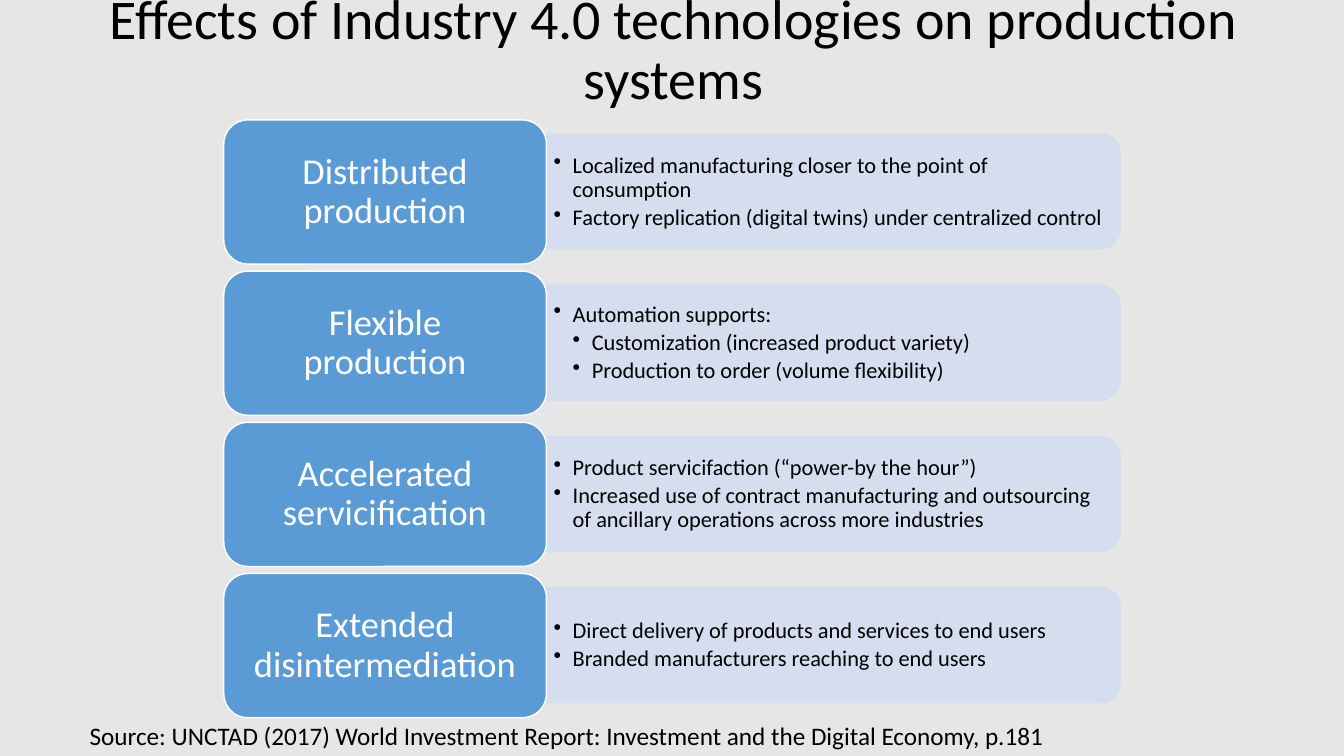
from lxml import etree
from pptx import Presentation
from pptx import util as u
from pptx.dml.color import RGBColor
from pptx.enum import shapes, text
from pptx.oxml import ns

ROWS = [
    ("Distributed production", [
        (1, "Localized manufacturing closer to the point of consumption"),
        (1, "Factory replication (digital twins) under centralized control"),
    ]),
    ("Flexible production", [
        (1, "Automation supports:"),
        (2, "Customization (increased product variety)"),
        (2, "Production to order (volume flexibility)"),
    ]),
    ("Accelerated servicification", [
        (1, "Product servicifaction (“power-by the hour”)"),
        (1, "Increased use of contract manufacturing and outsourcing of ancillary operations across more industries"),
    ]),
    ("Extended disintermediation", [
        (1, "Direct delivery of products and services to end users"),
        (1, "Branded manufacturers reaching to end users"),
    ]),
]


def colour(hex_string):
    return RGBColor.from_string(hex_string)


class EffectsSlide:
    FONT = "Calibri"
    BACKGROUND = "E7E6E6"
    BLUE = "5B9BD5"
    PALE = "D2DEEF"
    BLACK = "000000"
    WHITE = "FFFFFF"
    INDENT = u.Inches(0.19)

    def __init__(self, presentation):
        self.slide = presentation.slides.add_slide(presentation.slide_layouts[5])
        fill = self.slide.background.fill
        fill.solid()
        fill.fore_color.rgb = colour(self.BACKGROUND)

    def style(self, paragraph, size, hex_string, align=text.PP_ALIGN.LEFT, spacing=0.9):
        paragraph.alignment = align
        paragraph.line_spacing = spacing
        paragraph.font.name = self.FONT
        paragraph.font.size = u.Pt(size)
        paragraph.font.color.rgb = colour(hex_string)

    def frame(self, shape, side=0.1, edge=0.05, anchor=text.MSO_ANCHOR.MIDDLE, wrap=True):
        frame = shape.text_frame
        frame.word_wrap = wrap
        frame.vertical_anchor = anchor
        frame.margin_left = frame.margin_right = u.Inches(side)
        frame.margin_top = frame.margin_bottom = u.Inches(edge)
        return frame

    def box(self, kind, left, top, width, height, fill, line):
        shape = self.slide.shapes.add_shape(kind, *map(u.Inches, (left, top, width, height)))
        shape.shadow.inherit = False
        shape.fill.solid()
        shape.fill.fore_color.rgb = colour(fill)
        shape.line.color.rgb = colour(line)
        shape.line.width = u.Pt(1)
        return shape

    def textbox(self, left, top, width, height):
        return self.slide.shapes.add_textbox(*map(u.Inches, (left, top, width, height)))

    def title(self, words):
        shape = self.slide.shapes.title
        shape.left, shape.top, shape.width, shape.height = map(u.Inches, (0.05, 0.19, 13.26, 0.64))
        frame = self.frame(shape)
        frame.auto_size = text.MSO_AUTO_SIZE.NONE
        frame.text = words
        self.style(frame.paragraphs[0], 40, self.BLACK, text.PP_ALIGN.CENTER)

    def bar(self, left, top, width, height):
        turned_left = left + (width - height) / 2
        turned_top = top + (height - width) / 2
        shape = self.box(shapes.MSO_SHAPE.ROUND_2_SAME_RECTANGLE, turned_left, turned_top,
                         height, width, self.PALE, self.PALE)
        shape.rotation = 90
        for tint in list(shape._element.spPr.iter(ns.qn("a:srgbClr"))):
            etree.SubElement(tint, ns.qn("a:alpha"), val="90000")

    def bullets(self, left, top, width, height, items):
        frame = self.frame(self.textbox(left, top, width, height), 0.07, 0.03)
        for index, (level, words) in enumerate(items):
            paragraph = frame.add_paragraph() if index else frame.paragraphs[0]
            paragraph.text = words
            paragraph.level = level
            properties = paragraph._p.get_or_add_pPr()
            properties.set("marL", str(self.INDENT * level))
            properties.set("indent", str(-self.INDENT))
            etree.SubElement(properties, ns.qn("a:buChar"), char="•")
            paragraph.space_after = u.Pt(2.9)
            self.style(paragraph, 16, self.BLACK)

    def label(self, left, top, width, height, words):
        shape = self.box(shapes.MSO_SHAPE.ROUNDED_RECTANGLE, left, top, width, height,
                         self.BLUE, self.WHITE)
        frame = self.frame(shape, 0.18, 0.12)
        frame.text = words
        self.style(frame.paragraphs[0], 26, self.WHITE, text.PP_ALIGN.CENTER)

    def row(self, top, heading, items):
        self.bar(5.42, top + 0.14, 5.69, 1.14)
        self.bullets(5.42, top + 0.2, 5.63, 1.03, items)
        self.label(2.22, top, 3.2, 1.43, heading)

    def source(self, words):
        frame = self.frame(self.textbox(0.79, 7.1, 9.78, 0.4),
                           anchor=text.MSO_ANCHOR.TOP, wrap=False)
        frame.auto_size = text.MSO_AUTO_SIZE.SHAPE_TO_FIT_TEXT
        frame.text = words
        self.style(frame.paragraphs[0], 18, self.BLACK, spacing=1.0)


def main():
    presentation = Presentation()
    presentation.slide_width = u.Inches(13.33)
    presentation.slide_height = u.Inches(7.5)
    slide = EffectsSlide(presentation)
    slide.title("Effects of Industry 4.0 technologies on production systems")
    for index, (heading, items) in enumerate(ROWS):
        slide.row(1.19 + 1.5 * index, heading, items)
    slide.source("Source: UNCTAD (2017) World Investment Report: "
                 "Investment and the Digital Economy, p.181")
    presentation.save("out.pptx")


if __name__ == "__main__":
    main()
